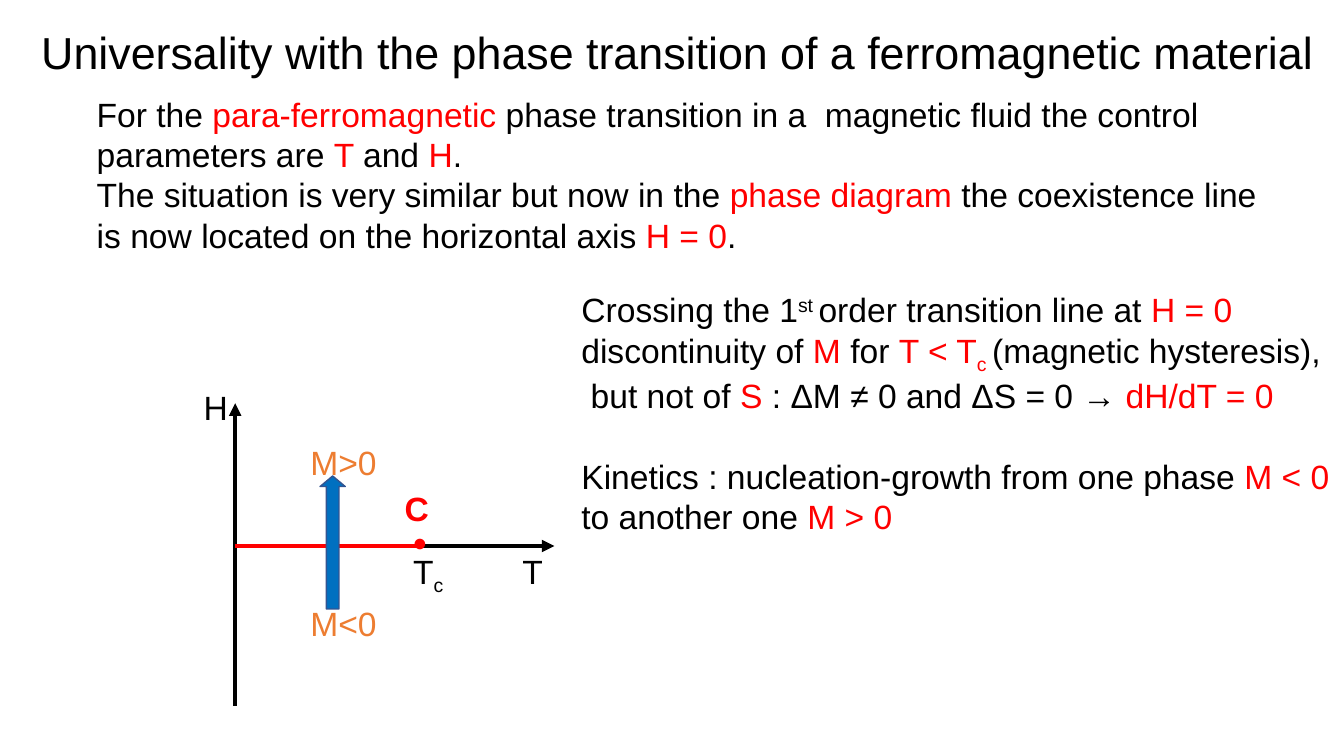
"""Build the slide on the universality of the ferromagnetic phase transition."""
from dataclasses import dataclass

from lxml import etree
from pptx import Presentation
from pptx.dml.color import RGBColor
from pptx.enum.shapes import MSO_CONNECTOR, MSO_SHAPE
from pptx.enum.text import MSO_AUTO_SIZE
from pptx.oxml.ns import qn
from pptx.util import Pt

STRAIGHT = MSO_CONNECTOR.STRAIGHT
UP_ARROW = MSO_SHAPE.UP_ARROW
FIT_SHAPE = MSO_AUTO_SIZE.SHAPE_TO_FIT_TEXT


@dataclass(frozen=True)
class Theme:
    """Hold the font, type sizes, line widths and colours."""
    font: str = "Arial"
    title: int = 32
    dot: int = 28
    body: int = 24
    axis: int = 3
    outline: int = 1
    black: RGBColor = RGBColor(0x00, 0x00, 0x00)
    red: RGBColor = RGBColor(0xFF, 0x00, 0x00)
    orange: RGBColor = RGBColor(0xED, 0x7D, 0x31)
    blue: RGBColor = RGBColor(0x00, 0x70, 0xC0)
    navy: RGBColor = RGBColor(0x32, 0x54, 0x91)


THEME = Theme()
SUB, SUP = -25000, 30000
BLANK_LINE = 28.8


def red(text, shift=0):
    """Return a red run, raised or lowered by shift."""
    return text, THEME.red, shift


def black(text, shift=0):
    """Return a black run, raised or lowered by shift."""
    return text, THEME.black, shift


def add_run(p, text, color, shift, size, bold):
    """Add one formatted run to a paragraph."""
    r = p.add_run()
    r.text = text
    r.font.name = THEME.font
    r.font.size = Pt(size)
    r.font.color.rgb = color
    if bold:
        r.font.bold = True
    if shift:
        r.font._element.set("baseline", str(shift))


def add_text(s, box, paragraphs, size=THEME.body, bold=False, wrap=False):
    """Add a text box of paragraphs, each a list of runs, and return its frame."""
    tf = s.shapes.add_textbox(*map(Pt, box)).text_frame
    tf.word_wrap = wrap
    tf.auto_size = FIT_SHAPE
    for i, runs in enumerate(paragraphs):
        p = tf.add_paragraph() if i else tf.paragraphs[0]
        for text, color, shift in runs:
            add_run(p, text, color, shift, size, bold)
    return tf


def add_line(s, start, end, color, arrow=False):
    """Add a straight line, with an arrowhead at its end if asked."""
    line = s.shapes.add_connector(STRAIGHT, *map(Pt, start + end))
    line.line.color.rgb = color
    line.line.width = Pt(THEME.axis)
    if arrow:
        ln = line.line._get_or_add_ln()
        etree.SubElement(ln, qn("a:tailEnd"), type="triangle")
    etree.SubElement(line._element.spPr, qn("a:effectLst"))


def add_up_arrow(s, box):
    """Add the block arrow that crosses the transition line."""
    sp = s.shapes.add_shape(UP_ARROW, *map(Pt, box))
    sp.adjustments[1] = 0.42
    sp.shadow.inherit = False
    sp.fill.solid()
    sp.fill.fore_color.rgb = THEME.blue
    sp.line.color.rgb = THEME.navy
    sp.line.width = Pt(THEME.outline)


def add_phase_diagram(s):
    """Draw the H-T phase diagram with its labels."""
    axis_x, axis_y = 168, 390
    add_line(s, (axis_x, 504), (axis_x, 288), THEME.black, arrow=True)
    add_line(s, (axis_x, axis_y), (306, axis_y), THEME.red)
    add_line(s, (300, axis_y), (396, axis_y), THEME.black, arrow=True)
    add_text(s, (288, 367, 27.4, 41), [[red("•")]], THEME.dot)
    add_text(s, (138.4, 273, 32, 36), [[black("H")]])
    add_text(s, (288, axis_y, 36, 36), [[black("T"), black("c", SUB)]])
    add_text(s, (366, axis_y, 29, 36), [[black("T")]])
    add_text(s, (282, 345, 32, 36), [[red("C")]], bold=True)
    for label, top in (("M>0", 312), ("M<0", 427)):
        add_text(s, (214.6, top, 62.6, 36), [[(label, THEME.orange, 0)]])
    add_up_arrow(s, (228.6, 340, 18, 95))


def main():
    """Create the slide and save it."""
    prs = Presentation()
    prs.slide_width, prs.slide_height = Pt(960), Pt(540)
    s = prs.slides.add_slide(prs.slide_layouts[6])

    add_text(s, (22.3, 14.4, 932.4, 46), [[
        black("Universality with the phase transition of a ferromagnetic material"),
    ]], THEME.title)
    add_text(s, (62, 63.4, 869.8, 124), [
        [black("For the "), red("para-ferromagnetic"),
         black(" phase transition in a  magnetic fluid the control parameters are "),
         red("T "), black("and "), red("H"), black(".")],
        [black("The situation is very similar but now in the "),
         red("phase diagram"), black(" the coexistence line")],
        [black("is now located on the horizontal axis "), red("H = 0"), black(".")],
    ], wrap=True)
    add_phase_diagram(s)
    tf = add_text(s, (408.2, 203, 560.9, 181.4), [
        [black("Crossing the 1"), black("st ", SUP),
         black("order transition line at "), red("H = 0")],
        [black("discontinuity of "), red("M "), black("for "), red("T < T"),
         red("c ", SUB), black("(magnetic hysteresis),")],
        [black(" but not of "), red("S "), black(": ΔM ≠ 0 and ΔS = 0 → "),
         red("dH/dT = 0")],
        [black("Kinetics : nucleation-growth from one phase "), red("M < 0")],
        [black("to another one "), red("M > 0")],
    ])
    tf.paragraphs[3].space_before = Pt(BLANK_LINE)

    prs.save("out.pptx")


if __name__ == "__main__":
    main()
